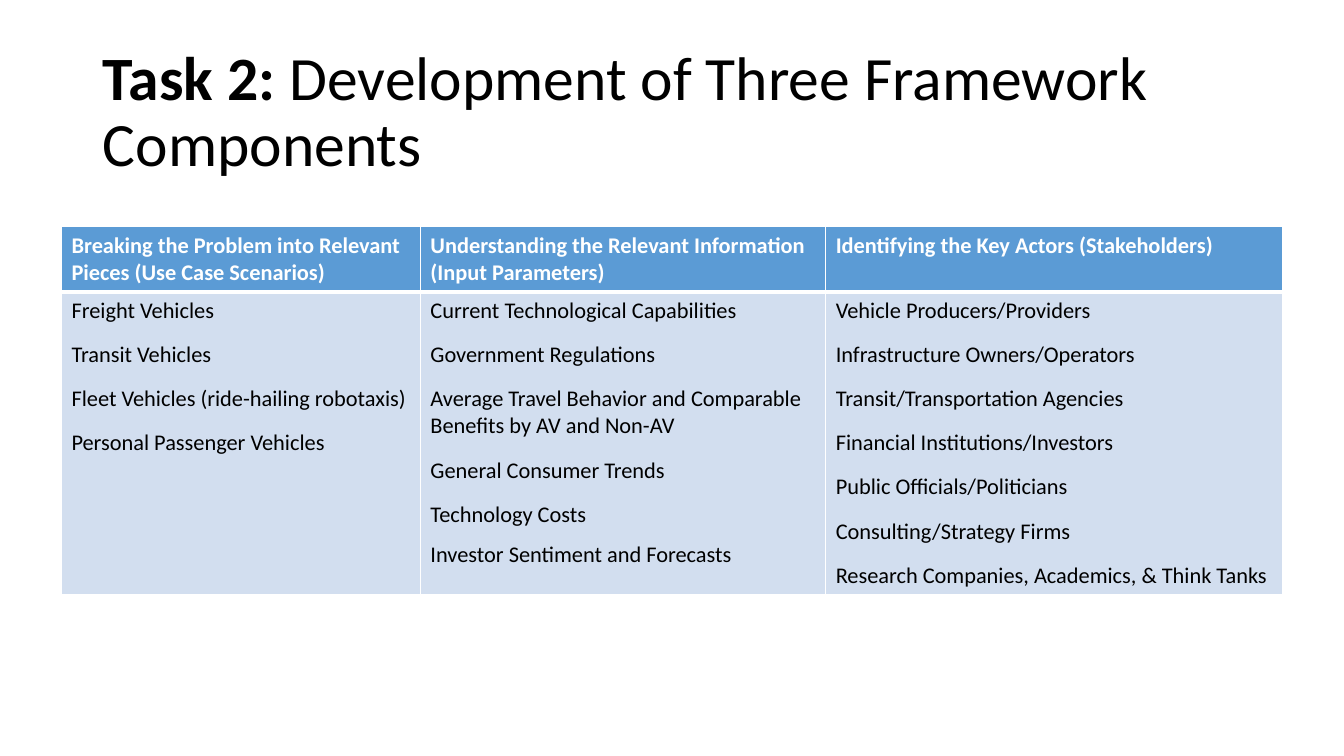
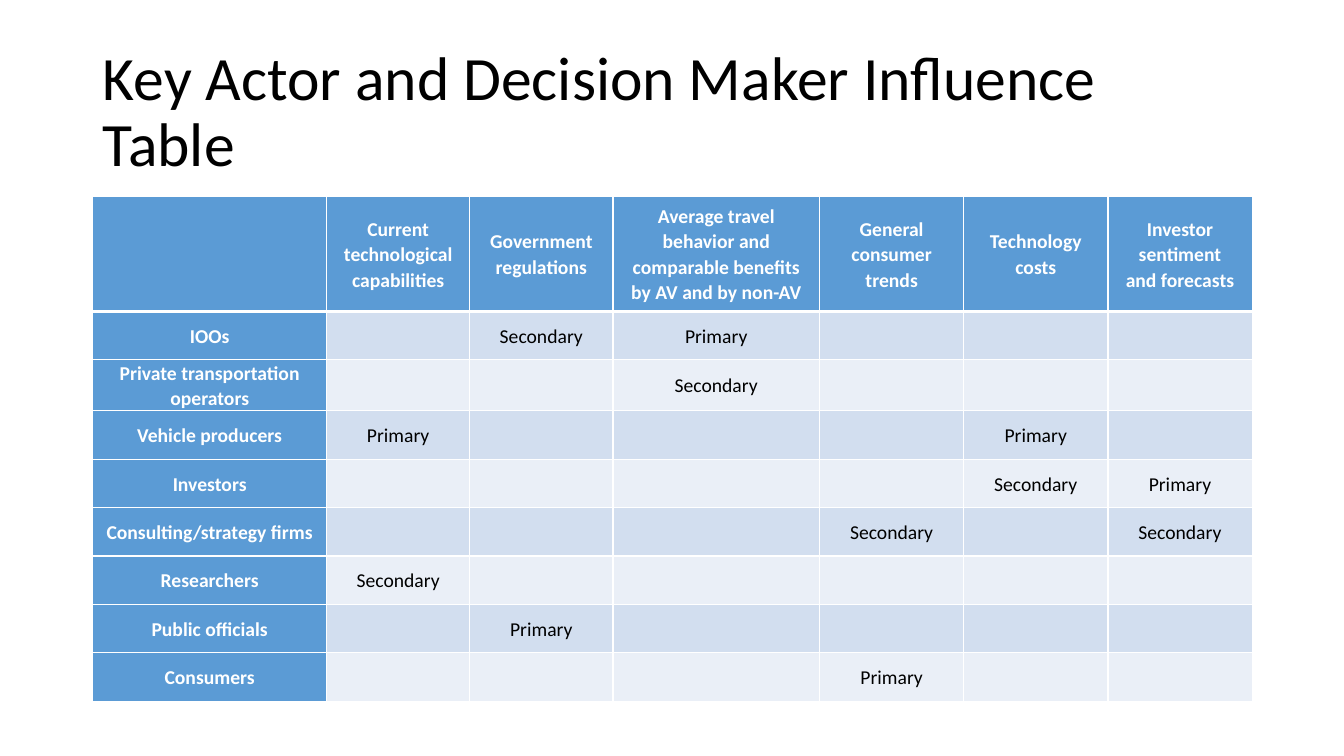
import dataclasses

import lxml.etree
import pptx
import pptx.dml.color
import pptx.enum.text
import pptx.oxml.ns
import pptx.util

Inches = pptx.util.Inches
Pt = pptx.util.Pt
ALIGN = pptx.enum.text.PP_ALIGN
ANCHOR = pptx.enum.text.MSO_ANCHOR


@dataclasses.dataclass(frozen=True)
class Theme:
    font: str = "Calibri"
    ink: str = "000000"
    paper: str = "FFFFFF"
    header: str = "5B9BD5"
    bands: tuple = ("D2DEEF", "EAEFF7")
    title_size: int = 44
    list_size: int = 16
    grid_size: int = 14
    thin_rule: int = 1
    thick_rule: int = 3


THEME = Theme()
TITLE_BOX = (0.92, 0.4, 11.5, 1.45)

COMPONENTS = {
    "Breaking the Problem into Relevant Pieces (Use Case Scenarios)": [
        "Freight Vehicles",
        "Transit Vehicles",
        "Fleet Vehicles (ride-hailing robotaxis)",
        "Personal Passenger Vehicles",
    ],
    "Understanding the Relevant Information (Input Parameters)": [
        "Current Technological Capabilities",
        "Government Regulations",
        "Average Travel Behavior and Comparable Benefits by AV and Non-AV",
        "General Consumer Trends",
        "Technology Costs",
        "Investor Sentiment and Forecasts",
    ],
    "Identifying the Key Actors (Stakeholders)": [
        "Vehicle Producers/Providers",
        "Infrastructure Owners/Operators",
        "Transit/Transportation Agencies",
        "Financial Institutions/Investors",
        "Public Officials/Politicians",
        "Consulting/Strategy Firms",
        "Research Companies, Academics, & Think Tanks",
    ],
}
TIGHT_ITEM = "Investor Sentiment and Forecasts"

PARAMETERS = [
    "Current technological capabilities",
    "Government regulations",
    "Average travel behavior and comparable benefits by AV and by non-AV",
    "General consumer trends",
    "Technology costs",
    "Investor sentiment and forecasts",
]
INFLUENCE = {
    "IOOs": {2: "Secondary", 3: "Primary"},
    "Private transportation operators": {3: "Secondary"},
    "Vehicle producers": {1: "Primary", 5: "Primary"},
    "Investors": {5: "Secondary", 6: "Primary"},
    "Consulting/strategy firms": {4: "Secondary", 6: "Secondary"},
    "Researchers": {1: "Secondary"},
    "Public officials": {2: "Primary"},
    "Consumers": {4: "Primary"},
}


def style_font(font, size, color, bold=False):
    font.name = THEME.font
    font.size = Pt(size)
    font.bold = bold
    font.color.rgb = pptx.dml.color.RGBColor.from_string(color)


def add_titled_page(deck, box, title, lead=""):
    page = deck.slides.add_slide(deck.slide_layouts[5])
    holder = page.shapes.title
    holder.left, holder.top, holder.width, holder.height = map(Inches, box)
    frame = holder.text_frame
    frame.word_wrap = True
    frame.auto_size = pptx.enum.text.MSO_AUTO_SIZE.NONE
    frame.vertical_anchor = ANCHOR.MIDDLE
    para = frame.paragraphs[0]
    para.alignment = ALIGN.LEFT
    para.line_spacing = 0.9
    for words, bold in ((lead, True), (title, False)):
        if words:
            span = para.add_run()
            span.text = words
            style_font(span.font, THEME.title_size, THEME.ink, bold)
    return page


def add_plain_table(page, box, widths, heights):
    frame = page.shapes.add_table(len(heights), len(widths), *map(Inches, box))
    table = frame.table
    table.horz_banding = False
    for column, width in zip(table.columns, widths):
        column.width = Inches(width)
    for row, height in zip(table.rows, heights):
        row.height = Inches(height)
    return table


def rule_cell(cell, row):
    rules = {
        "a:lnL": THEME.thin_rule,
        "a:lnR": THEME.thin_rule,
        "a:lnT": THEME.thick_rule if row == 1 else THEME.thin_rule,
        "a:lnB": THEME.thick_rule if row == 0 else THEME.thin_rule,
    }
    qn = pptx.oxml.ns.qn
    properties = cell._tc.get_or_add_tcPr()
    for side, weight in rules.items():
        line = lxml.etree.SubElement(properties, qn(side), w=str(Pt(weight)))
        fill = lxml.etree.SubElement(line, qn("a:solidFill"))
        lxml.etree.SubElement(fill, qn("a:srgbClr"), val=THEME.paper)


def paint_cell(cell, row, is_header):
    rule_cell(cell, row)
    color = THEME.header if is_header else THEME.bands[(row - 1) % 2]
    cell.fill.solid()
    cell.fill.fore_color.rgb = pptx.dml.color.RGBColor.from_string(color)


def fill_list_cell(cell, items, is_header):
    frame = cell.text_frame
    frame.text = "\n".join(items)
    color = THEME.paper if is_header else THEME.ink
    for index, para in enumerate(frame.paragraphs):
        if index:
            para.space_before = Pt(3 if para.text == TIGHT_ITEM else 6)
        else:
            para.space_before = Pt(0)
        para.space_after = Pt(6)
        style_font(para.runs[0].font, THEME.list_size, color, is_header)


def fill_grid_cell(cell, words, is_header, indent):
    cell.margin_left = cell.margin_right = Inches(0.07)
    cell.margin_top = cell.margin_bottom = 0
    cell.vertical_anchor = ANCHOR.MIDDLE
    para = cell.text_frame.paragraphs[0]
    para.text = words
    para.alignment = ALIGN.CENTER
    para.line_spacing = 1.07
    if indent:
        properties = para._p.get_or_add_pPr()
        for side in ("marL", "marR"):
            properties.set(side, str(Inches(indent)))
    color = THEME.paper if is_header else THEME.ink
    style_font(para.runs[0].font, THEME.grid_size, color, is_header)


def add_component_table(page, box):
    table = add_plain_table(page, box, (3.56, 4.02, 4.53), (0.64, 3))
    for column, (heading, items) in enumerate(COMPONENTS.items()):
        for row, entries in enumerate(([heading], items)):
            cell = table.cell(row, column)
            paint_cell(cell, row, row == 0)
            fill_list_cell(cell, entries, row == 0)


def add_influence_table(page, box):
    widths = (2.32, 1.42, 1.42, 2.05, 1.43, 1.43, 1.43)
    heights = [1.14] + [0.48] * len(INFLUENCE)
    table = add_plain_table(page, box, widths, heights)
    table.first_col = True
    rows = [dict(enumerate(PARAMETERS, 1))]
    rows += [{0: actor, **levels} for actor, levels in INFLUENCE.items()]
    for row, entries in enumerate(rows):
        for column in range(len(widths)):
            cell = table.cell(row, column)
            is_header = row == 0 or column == 0
            paint_cell(cell, row, is_header)
            if column in entries:
                indent = 0.08 if row == 0 else 0
                fill_grid_cell(cell, entries[column], is_header, indent)


def main():
    deck = pptx.Presentation()
    deck.slide_width = Inches(13.33)
    deck.slide_height = Inches(7.5)
    components = add_titled_page(
        deck, TITLE_BOX, "Development of Three Framework Components", "Task 2: "
    )
    add_component_table(components, (0.61, 2.25, 12.11, 3.64))
    influence = add_titled_page(
        deck, TITLE_BOX, "Key Actor and Decision Maker Influence Table"
    )
    add_influence_table(influence, (0.92, 1.95, 11.5, 4.98))
    deck.save("out.pptx")


if __name__ == "__main__":
    main()
